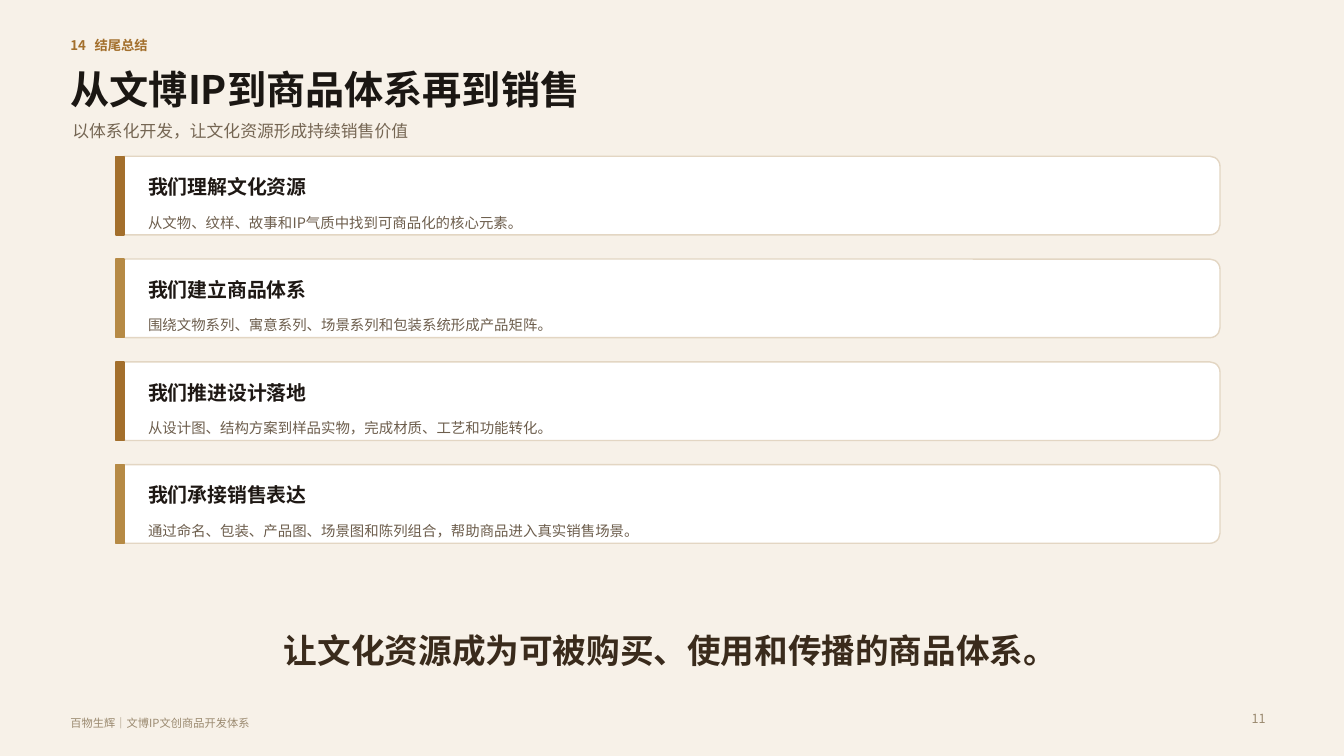
"""Build the closing summary slide with four value cards."""
from dataclasses import dataclass

from lxml.etree import SubElement
from pptx import Presentation
from pptx.dml.color import RGBColor
from pptx.enum.shapes import MSO_SHAPE as SHAPE
from pptx.enum.text import MSO_ANCHOR as ANCHOR, MSO_AUTO_SIZE as AUTO, PP_ALIGN as ALIGN
from pptx.oxml.ns import qn
from pptx.shapes.autoshape import Shape
from pptx.slide import Slide
from pptx.util import Inches, Pt

FONT = "Noto Sans CJK SC"
BRONZE, GOLD, MUTED = "A36F2C", "B68A45", "9B8A70"
CARD_LEFT, CARD_TOP, CARD_W, CARD_H, CARD_STEP = 1.15, 1.55, 10.95, 0.78, 1.02


@dataclass
class Style:
    size: float
    color: str
    bold: bool = False
    align: ALIGN = ALIGN.LEFT
    anchor: ANCHOR = ANCHOR.MIDDLE


@dataclass
class Label:
    text: str
    box: tuple[float, float, float, float]
    style: Style


@dataclass
class Card:
    heading: str
    detail: str
    accent: str


TITLE = Label("从文博IP到商品体系再到销售", (0.6, 0.63, 8.9, 0.5), Style(28, "1B1713", True))
SECTION = Label("14\t结尾总结", (0.6, 0.33, 3.2, 0.23), Style(9.5, BRONZE, True))
LABELS = [
    Label("以体系化开发，让文化资源形成持续销售价值", (0.62, 1.14, 9.2, 0.32), Style(12, "756653")),
    Label("让文化资源成为可被购买、使用和传播的商品体系。", (1.35, 6.22, 10.6, 0.45),
          Style(24, "3A2B1C", True, ALIGN.CENTER)),
    Label("百物生辉｜文博IP文创商品开发体系", (0.6, 7.08, 4.6, 0.18), Style(8, MUTED)),
    Label("11", (12.1, 7.02, 0.55, 0.22), Style(9, MUTED, align=ALIGN.RIGHT)),
]
HEADING = Style(14.2, "1E1814", True)
DETAIL = Style(10.3, "6D5E4D", anchor=ANCHOR.TOP)
CARDS = [
    Card("我们理解文化资源", "从文物、纹样、故事和IP气质中找到可商品化的核心元素。", BRONZE),
    Card("我们建立商品体系", "围绕文物系列、寓意系列、场景系列和包装系统形成产品矩阵。", GOLD),
    Card("我们推进设计落地", "从设计图、结构方案到样品实物，完成材质、工艺和功能转化。", BRONZE),
    Card("我们承接销售表达", "通过命名、包装、产品图、场景图和陈列组合，帮助商品进入真实销售场景。", GOLD),
]


def rgb(color: str) -> RGBColor:
    return RGBColor.from_string(color)


def write(sp: Shape, text: str, style: Style) -> None:
    tf = sp.text_frame
    tf.word_wrap = True
    tf.auto_size = AUTO.NONE
    tf.vertical_anchor = style.anchor
    p = tf.paragraphs[0]
    p.alignment = style.align
    r = p.add_run()
    r.text = text
    r.font.size = Pt(style.size)
    r.font.bold = style.bold
    r.font.color.rgb = rgb(style.color)
    r.font.name = FONT
    SubElement(r._r.get_or_add_rPr(), qn("a:ea"), typeface=FONT)


def add_label(s: Slide, label: Label) -> Shape:
    sp = s.shapes.add_textbox(*map(Inches, label.box))
    write(sp, label.text, label.style)
    return sp


def add_block(s: Slide, kind: SHAPE, top: float, width: float, fill: str, line: str) -> Shape:
    sp = s.shapes.add_shape(kind, *map(Inches, (CARD_LEFT, top, width, CARD_H)))
    sp.shadow.inherit = False
    sp.fill.solid()
    sp.fill.fore_color.rgb = rgb(fill)
    sp.line.color.rgb = rgb(line)
    sp.line.width = Pt(1)
    return sp


def add_card(s: Slide, card: Card, top: float) -> None:
    panel = add_block(s, SHAPE.ROUNDED_RECTANGLE, top, CARD_W, "FFFFFF", "E3D6C3")
    panel.adjustments[0] = 0.128
    add_block(s, SHAPE.RECTANGLE, top, 0.08, card.accent, card.accent)
    left = CARD_LEFT + 0.22
    add_label(s, Label(card.heading, (left, top + 0.16, 10.6, 0.28), HEADING))
    add_label(s, Label(card.detail, (left, top + 0.52, 10.57, 0.18), DETAIL))


def add_title(s: Slide) -> None:
    sp = s.shapes.title
    sp.left, sp.top, sp.width, sp.height = map(Inches, TITLE.box)
    write(sp, TITLE.text, TITLE.style)


def add_section(s: Slide) -> None:
    p = add_label(s, SECTION).text_frame.paragraphs[0]
    tabs = SubElement(p._p.get_or_add_pPr(), qn("a:tabLst"))
    SubElement(tabs, qn("a:tab"), pos=str(Inches(0.24)), algn="l")


def main() -> None:
    prs = Presentation()
    prs.slide_width, prs.slide_height = Inches(13.33), Inches(7.5)
    s = prs.slides.add_slide(prs.slide_layouts[5])
    s.background.fill.solid()
    s.background.fill.fore_color.rgb = rgb("F7F1E8")
    add_title(s)
    add_section(s)
    for i, card in enumerate(CARDS):
        add_card(s, card, CARD_TOP + i * CARD_STEP)
    for label in LABELS:
        add_label(s, label)
    prs.save("out.pptx")


if __name__ == "__main__":
    main()
